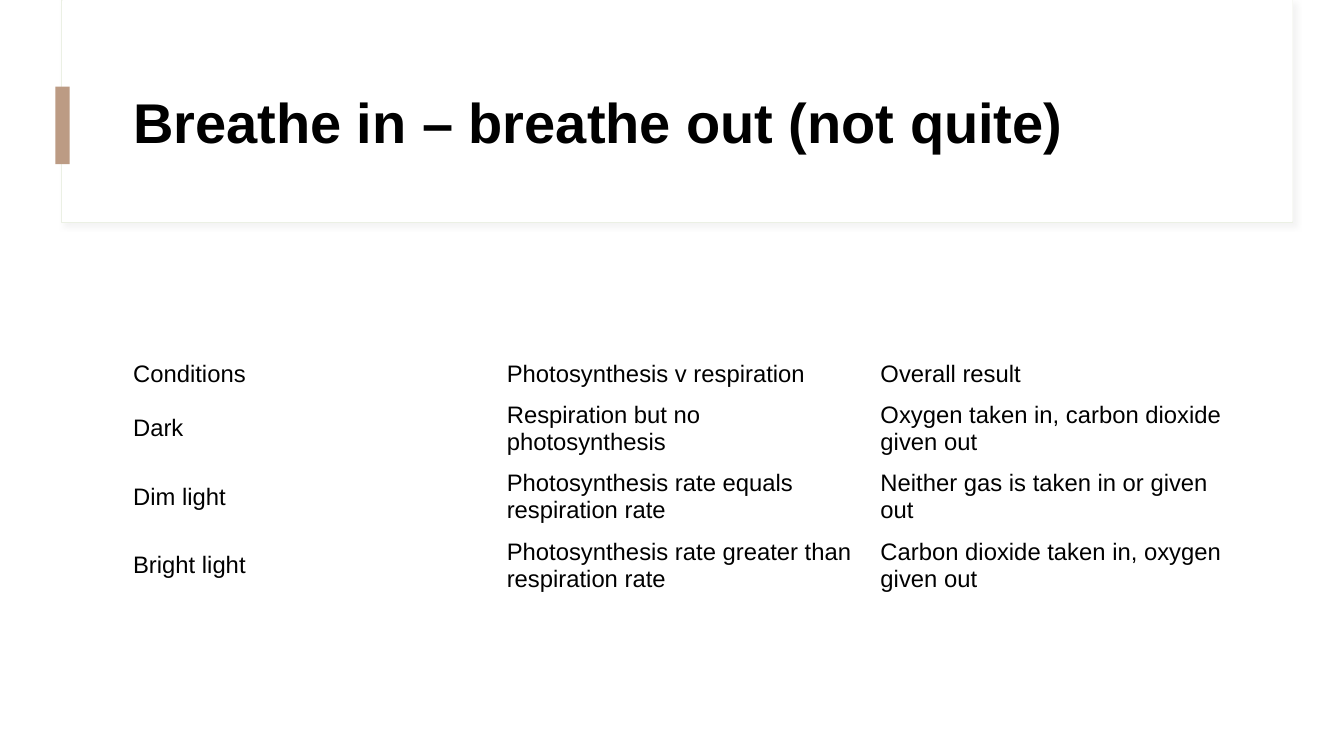
from lxml import etree
from pptx import Presentation
from pptx import util as u
from pptx.dml.color import RGBColor
from pptx.enum import shapes, text
from pptx.oxml import ns

WHITE = RGBColor(0xFF, 0xFF, 0xFF)
BLACK = RGBColor(0, 0, 0)
EDGE = RGBColor(0xEB, 0xF0, 0xE4)
TAN = RGBColor(0xBC, 0x9B, 0x84)
SHADE = RGBColor(0xD9, 0xD9, 0xD9)
FONT = "Arial"
LEFT, WIDTH = 1.22, 11.12

ROWS = [
    ("Conditions", "Photosynthesis v respiration", "Overall result"),
    ("Dark", "Respiration but no photosynthesis",
     "Oxygen taken in, carbon dioxide given out"),
    ("Dim light", "Photosynthesis rate equals respiration rate",
     "Neither gas is taken in or given out"),
    ("Bright light", "Photosynthesis rate greater than respiration rate",
     "Carbon dioxide taken in, oxygen given out"),
]


def add_run(frame, words, size, bold=False):
    para = frame.paragraphs[0]
    para.alignment = text.PP_ALIGN.LEFT
    run = para.add_run()
    run.text = words
    run.font.name = FONT
    run.font.size = u.Pt(size)
    run.font.bold = bold
    run.font.color.rgb = BLACK
    return para


def add_box(slide, box, fill, line=None):
    shape = slide.shapes.add_shape(
        shapes.MSO_SHAPE.RECTANGLE, *map(u.Inches, box))
    shape.shadow.inherit = False
    shape.fill.solid()
    shape.fill.fore_color.rgb = fill
    if line is None:
        shape.line.fill.background()
    else:
        shape.line.color.rgb = line
        shape.line.width = u.Pt(0.75)
    return shape


def add_shade(shape):
    effects = shape.element.spPr.find(ns.qn("a:effectLst"))
    outer = etree.SubElement(
        effects, ns.qn("a:outerShdw"), blurRad=str(u.Pt(4)),
        dist=str(u.Pt(3)), dir=str(45 * 60000), algn="tl", rotWithShape="0")
    color = etree.SubElement(outer, ns.qn("a:srgbClr"), val=str(SHADE))
    etree.SubElement(color, ns.qn("a:alpha"), val="30000")


def set_title(slide, words):
    title = slide.shapes.title
    title.left, title.top = u.Inches(LEFT), u.Inches(0.6)
    title.width, title.height = u.Inches(WIDTH), u.Inches(1.29)
    frame = title.text_frame
    frame.word_wrap = True
    frame.auto_size = text.MSO_AUTO_SIZE.NONE
    frame.vertical_anchor = text.MSO_ANCHOR.MIDDLE
    add_run(frame, words, 40, True).line_spacing = 0.9
    title.element.getparent().append(title.element)


def add_grid(slide):
    box = (LEFT, 3.52, WIDTH, 2.42)
    table = slide.shapes.add_table(
        len(ROWS), len(ROWS[0]), *map(u.Inches, box)).table
    table.first_row = table.horz_banding = False
    for i, row in enumerate(ROWS):
        table.rows[i].height = u.Inches(0.68 if i else 0.39)
        for j, words in enumerate(row):
            cell = table.cell(i, j)
            cell.fill.solid()
            cell.fill.fore_color.rgb = WHITE
            cell.vertical_anchor = text.MSO_ANCHOR.MIDDLE
            add_run(cell.text_frame, words, 17)


def main():
    deck = Presentation()
    deck.slide_width, deck.slide_height = u.Inches(13.33), u.Inches(7.5)
    slide = deck.slides.add_slide(deck.slide_layouts[5])
    add_shade(add_box(slide, (0.61, 0, 12.21, 2.21), WHITE, EDGE))
    add_box(slide, (0.62, 0, 12.2, 2.2), WHITE)
    add_box(slide, (0.55, 0.86, 0.14, 0.77), TAN)
    set_title(slide, "Breathe in – breathe out (not quite)")
    add_grid(slide)
    deck.save("out.pptx")


if __name__ == "__main__":
    main()
